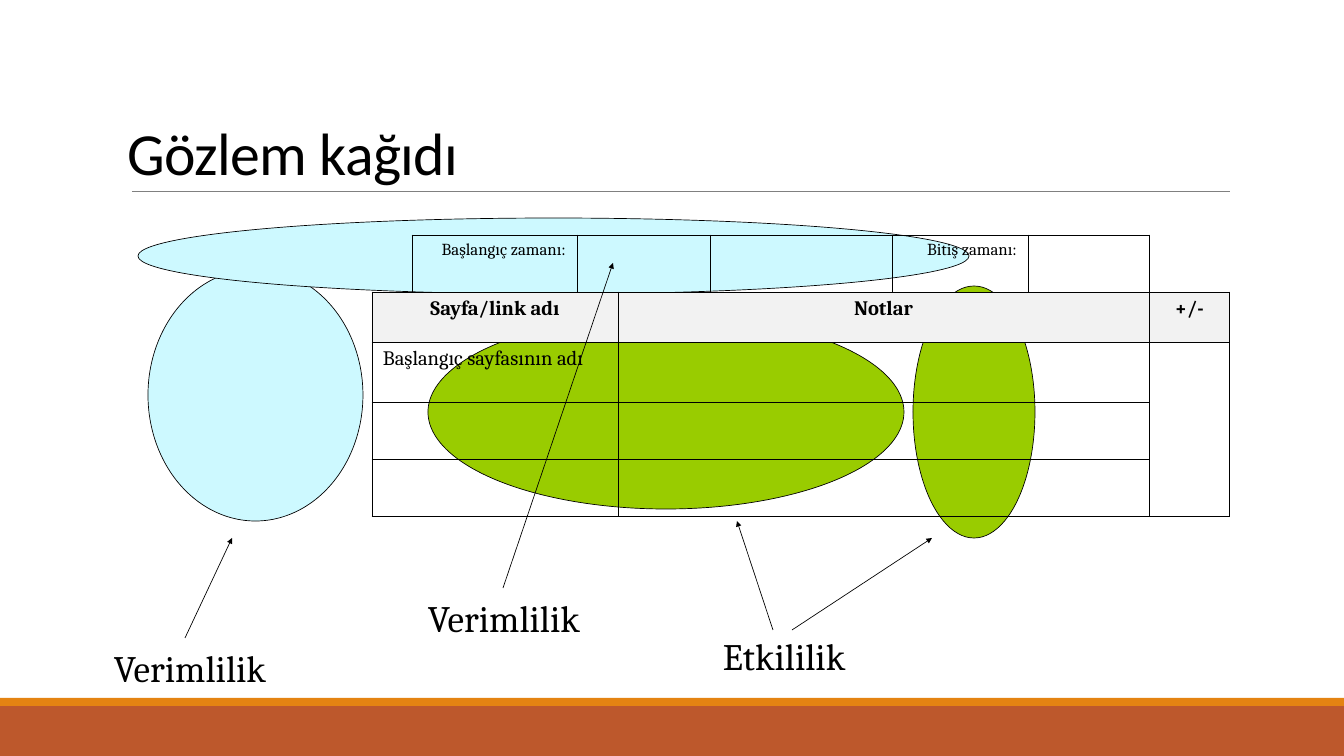
from lxml import etree
from pptx import Presentation, util as u
from pptx.dml.color import RGBColor
from pptx.enum import shapes, text
from pptx.oxml.ns import qn

PX = 914400 / 67.2
BLACK = RGBColor(0x00, 0x00, 0x00)
GREY = RGBColor(0x80, 0x80, 0x80)
HEADER_GREY = RGBColor(0xF2, 0xF2, 0xF2)
RUST = RGBColor(0xBD, 0x58, 0x2C)
ORANGE = RGBColor(0xE4, 0x83, 0x12)
GREEN = RGBColor(0x99, 0xCC, 0x00)
CYAN = RGBColor(0xCD, 0xF9, 0xFF)


def px(*lengths):
    return [u.Emu(round(length * PX)) for length in lengths]


def add_run(paragraph, words, size, font="Cambria", bold=False):
    run = paragraph.add_run()
    run.text = words
    run.font.size = u.Pt(size)
    run.font.name = font
    run.font.bold = bold
    run.font.color.rgb = BLACK
    return run


def set_insets(frame, across, down):
    frame.margin_left = frame.margin_right = px(across)[0]
    frame.margin_top = frame.margin_bottom = px(down)[0]


def add_plain(slide, preset, box, fill, outlined=False):
    shape = slide.shapes.add_shape(preset, *px(*box))
    shape.shadow.inherit = False
    shape.fill.solid()
    shape.fill.fore_color.rgb = fill
    if outlined:
        shape.line.color.rgb = BLACK
        shape.line.width = u.Pt(0.75)
    else:
        shape.line.fill.background()


def add_line(slide, start, end, color=BLACK, width=0.75, arrow=True):
    line = slide.shapes.add_connector(shapes.MSO_CONNECTOR.STRAIGHT, *px(*start, *end))
    line.line.color.rgb = color
    line.line.width = u.Pt(width)
    properties = line.element.spPr
    if arrow:
        etree.SubElement(properties.find(qn("a:ln")), qn("a:tailEnd"), type="triangle")
    etree.SubElement(properties, qn("a:effectLst"))


def add_footer(slide, box):
    left, top, width, height = box
    stripe = 8
    rect = shapes.MSO_SHAPE.RECTANGLE
    add_plain(slide, rect, (left, top + stripe, width, height - stripe), RUST)
    add_plain(slide, rect, (left, top, width, stripe), ORANGE)


def add_title(slide, box):
    left, top, width, height = box
    title = slide.shapes.title
    title.left, title.top, title.width, title.height = px(*box)
    frame = title.text_frame
    frame.vertical_anchor = text.MSO_ANCHOR.BOTTOM
    frame.word_wrap = True
    heading = frame.paragraphs[0]
    heading.alignment = text.PP_ALIGN.LEFT
    heading.line_spacing = 0.85
    run = add_run(heading, "Gözlem kağıdı", 64, "Calibri")
    run.font._element.set("spc", "-70")
    # Rule below the title
    rule_y = top + height
    add_line(slide, (left + 11, rule_y), (left + width, rule_y), GREY, 0.5, arrow=False)


def set_borders(cell, hidden=""):
    """Draw all four sides, except those named in hidden."""
    properties = cell._tc.get_or_add_tcPr()
    for place, side in enumerate("LRTB"):
        border = etree.Element(qn(f"a:ln{side}"), w=str(u.Pt(1)))
        if side in hidden:
            etree.SubElement(border, qn("a:noFill"))
        else:
            paint = etree.SubElement(border, qn("a:solidFill"))
            etree.SubElement(paint, qn("a:srgbClr"), val=str(BLACK))
        properties.insert(place, border)


def add_observation_sheet(slide, box):
    columns = [40, 165, 41, 92, 182, 136, 121, 81]
    rows = [57, 50, 60, 57, 57]
    sheet = slide.shapes.add_table(len(rows), len(columns), *px(*box)).table
    sheet.first_row = sheet.horz_banding = False
    for column, width in zip(sheet.columns, px(*columns)):
        column.width = width
    for row, height in zip(sheet.rows, px(*rows)):
        row.height = height

    # Cell looks: header row is grey, top corners stay open
    open_sides = {(0, 0): "LT", (0, len(columns) - 1): "RT"}
    for r in range(len(rows)):
        for c in range(len(columns)):
            cell = sheet.cell(r, c)
            if r == 1:
                cell.fill.solid()
                cell.fill.fore_color.rgb = HEADER_GREY
            else:
                cell.fill.background()
            set_borders(cell, open_sides.get((r, c), ""))

    # Merged cells
    sheet.cell(0, 2).merge(sheet.cell(0, 3))
    for r in range(1, len(rows)):
        sheet.cell(r, 0).merge(sheet.cell(r, 2))
        sheet.cell(r, 3).merge(sheet.cell(r, 6))
    sheet.cell(2, 7).merge(sheet.cell(4, 7))

    # Wording
    align = text.PP_ALIGN
    for r, c, words, side, size, bold in [
        (0, 1, "Başlangıç zamanı:", align.RIGHT, 18, False),
        (0, 5, "Bitiş zamanı:", align.RIGHT, 18, False),
        (1, 0, "Sayfa/link adı", align.CENTER, 22, True),
        (1, 3, "Notlar", align.CENTER, 22, True),
        (1, 7, "+/-", align.CENTER, 22, True),
        (2, 0, "Başlangıç sayfasının adı", align.LEFT, 22, False),
    ]:
        cell = sheet.cell(r, c)
        set_insets(cell, 11, 5)
        entry = cell.text_frame.paragraphs[0]
        entry.alignment = side
        indent = px(26)[0]
        properties = entry._p.get_or_add_pPr()
        properties.set("marL", str(indent))
        properties.set("indent", str(-indent))
        add_run(entry, words, size, bold=bold)


def add_measure(slide, box, words, arrows):
    """Label with arrows; arrow points count from the label's top left."""
    left, top = box[:2]
    label = slide.shapes.add_textbox(*px(*box))
    frame = label.text_frame
    frame.word_wrap = False
    frame.auto_size = text.MSO_AUTO_SIZE.SHAPE_TO_FIT_TEXT
    set_insets(frame, 13, 7)
    add_run(frame.paragraphs[0], words, 40)
    for start, end in arrows:
        add_line(slide, (left + start[0], top + start[1]), (left + end[0], top + end[1]))


def main():
    deck = Presentation()
    deck.slide_width, deck.slide_height = px(1344, 756)
    slide = deck.slides.add_slide(deck.slide_layouts[5])

    add_footer(slide, (0, 698, 1344, 58))
    add_title(slide, (121, 32, 1109, 159))

    # Highlighted areas behind the sheet
    for box, color in [
        ((428, 315, 476, 194), GREEN),
        ((913, 286, 122, 252), GREEN),
        ((148, 269, 215, 252), CYAN),
        ((138, 218, 831, 76), CYAN),
    ]:
        add_plain(slide, shapes.MSO_SHAPE.OVAL, box, color, outlined=True)

    add_observation_sheet(slide, (372, 235, 858, 281))

    # Measures pointing at the areas
    add_measure(slide, (415, 588, 179, 59), "Verimlilik", [((88, 0), (198, -325))])
    add_measure(slide, (710, 626, 150, 59), "Etkililik",
                [((63, 4), (27, -105)), ((82, 4), (222, -88))])
    add_measure(slide, (101, 638, 179, 59), "Verimlilik", [((84, 0), (131, -100))])

    deck.save("out.pptx")


if __name__ == "__main__":
    main()
